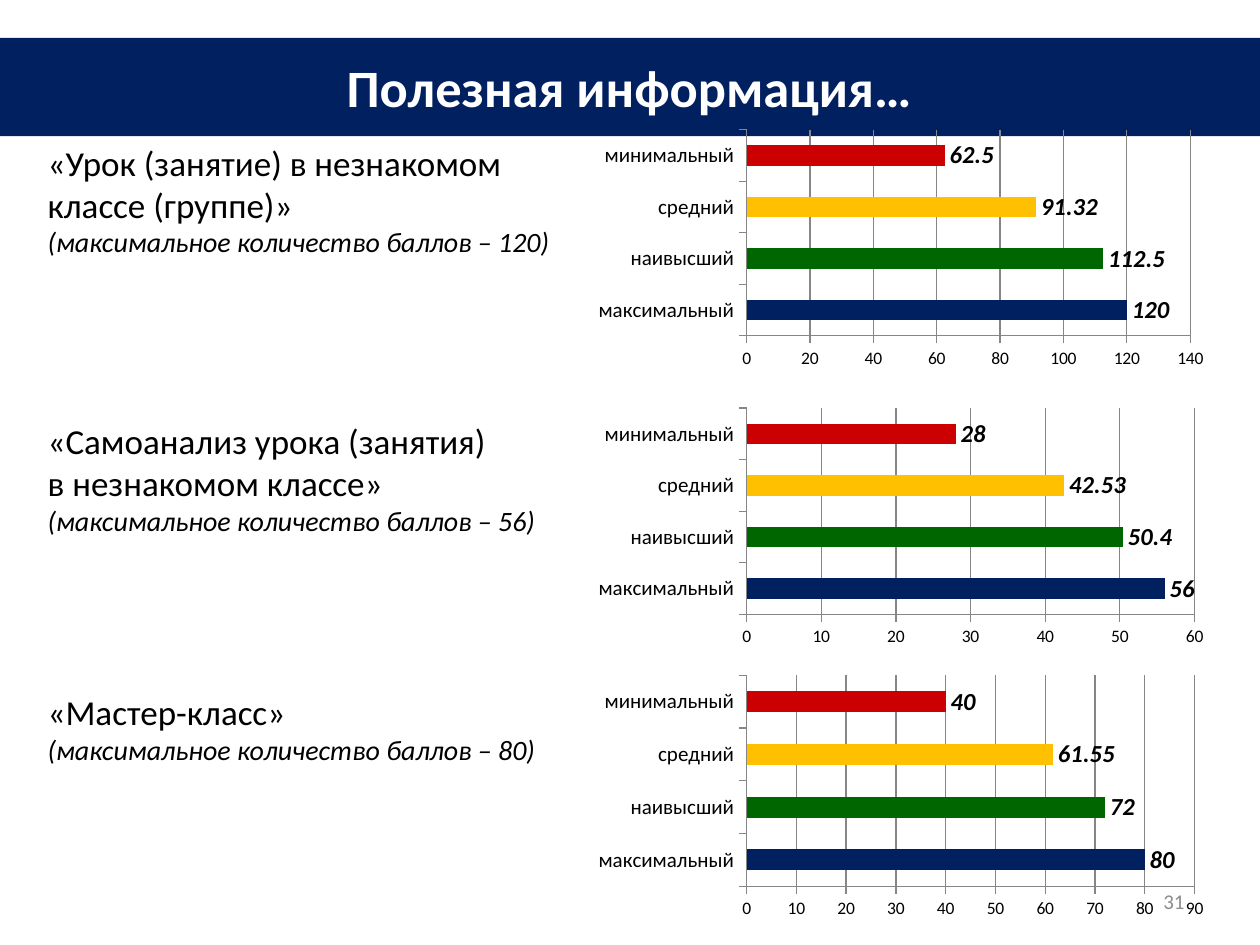
import pptx
import pptx.chart.data
import pptx.dml.color
import pptx.enum.chart
import pptx.enum.shapes
import pptx.enum.text
import pptx.util

PX = 9144
FONT = "Calibri"
HUES = {"navy": "002060", "green": "006600", "gold": "FFC000", "red": "CC0000",
        "black": "000000", "white": "FFFFFF", "gray": "8C8C8C", "line": "868686"}
LEVELS = {"максимальный": "navy", "наивысший": "green",
          "средний": "gold", "минимальный": "red"}
ALIGN = pptx.enum.text.PP_ALIGN


def color(name):
    return pptx.dml.color.RGBColor.from_string(HUES[name])


def write(box, lines, hue="black", bold=False, align=ALIGN.LEFT, anchor="TOP"):
    area = slide.shapes.add_textbox(*[n * PX for n in box])
    frame = area.text_frame
    frame.word_wrap = True
    frame.vertical_anchor = pptx.enum.text.MSO_ANCHOR[anchor]
    for i, (text, size, slant) in enumerate(lines):
        para = frame.paragraphs[0] if i == 0 else frame.add_paragraph()
        para.alignment = align
        run = para.add_run()
        run.text = text
        run.font.name = FONT
        run.font.size = pptx.util.Pt(size)
        run.font.bold = bold
        run.font.italic = slant
        run.font.color.rgb = color(hue)


deck = pptx.Presentation()
deck.slide_width = 1000 * PX
deck.slide_height = 750 * PX
slide = deck.slides.add_slide(deck.slide_layouts[6])

band = slide.shapes.add_shape(pptx.enum.shapes.MSO_SHAPE.RECTANGLE,
                              0, 30 * PX, 1000 * PX, 78 * PX)
band.shadow.inherit = False
band.fill.solid()
band.fill.fore_color.rgb = color("navy")
band.line.fill.background()

write((717, 695, 233, 40), [("31", 12, False)], hue="gray",
      align=ALIGN.RIGHT, anchor="MIDDLE")
write((106, 39, 787, 61), [("Полезная информация…", 30, False)], hue="white",
      bold=True, align=ALIGN.CENTER)

parts = [
    (["«Урок (занятие) в незнакомом", "классе (группе)»"],
     107, 104, 99, 197, [120, 112.5, 91.32, 62.5], 140, 20),
    (["«Самоанализ урока (занятия)", "в незнакомом классе»"],
     328, 104, 320, 197, [56, 50.4, 42.53, 28], 60, 10),
    (["«Мастер-класс»"],
     543, 71, 532, 201, [80, 72, 61.55, 40], 90, 10),
]

for heads, top, tall, y, high, vals, peak, step in parts:
    lines = [(head, 20, False) for head in heads]
    lines.append((f"(максимальное количество баллов – {vals[0]})", 16, True))
    write((28, top, 937, tall), lines)

for heads, top, tall, y, high, vals, peak, step in parts:
    data = pptx.chart.data.CategoryChartData()
    data.categories = list(LEVELS)
    data.add_series("Series 1", vals)
    chart = slide.shapes.add_chart(
        pptx.enum.chart.XL_CHART_TYPE.BAR_CLUSTERED,
        465 * PX, y * PX, 500 * PX, high * PX, data).chart
    chart.has_legend = False
    chart.has_title = False
    chart.font.name = FONT
    chart.font.size = pptx.util.Pt(10)
    chart.font.color.rgb = color("black")

    plot = chart.plots[0]
    plot.gap_width = 150
    plot.vary_by_categories = False
    bars = plot.series[0]
    bars.format.fill.solid()
    bars.format.fill.fore_color.rgb = color("red")
    for i, hue in enumerate(LEVELS.values()):
        fill = bars.points[i].format.fill
        fill.solid()
        fill.fore_color.rgb = color(hue)

    marks = bars.data_labels
    marks.show_value = True
    marks.position = pptx.enum.chart.XL_LABEL_POSITION.OUTSIDE_END
    marks.font.name = FONT
    marks.font.size = pptx.util.Pt(14)
    marks.font.bold = True
    marks.font.italic = True
    marks.font.color.rgb = color("black")

    scale = chart.value_axis
    scale.minimum_scale = 0
    scale.maximum_scale = peak
    scale.major_unit = step
    scale.has_major_gridlines = True
    scale.major_gridlines.format.line.color.rgb = color("line")
    chart.category_axis.tick_labels.font.size = pptx.util.Pt(12)
    for axis in (scale, chart.category_axis):
        axis.major_tick_mark = pptx.enum.chart.XL_TICK_MARK.OUTSIDE
        axis.minor_tick_mark = pptx.enum.chart.XL_TICK_MARK.NONE
        axis.format.line.color.rgb = color("line")

deck.save("out.pptx")
